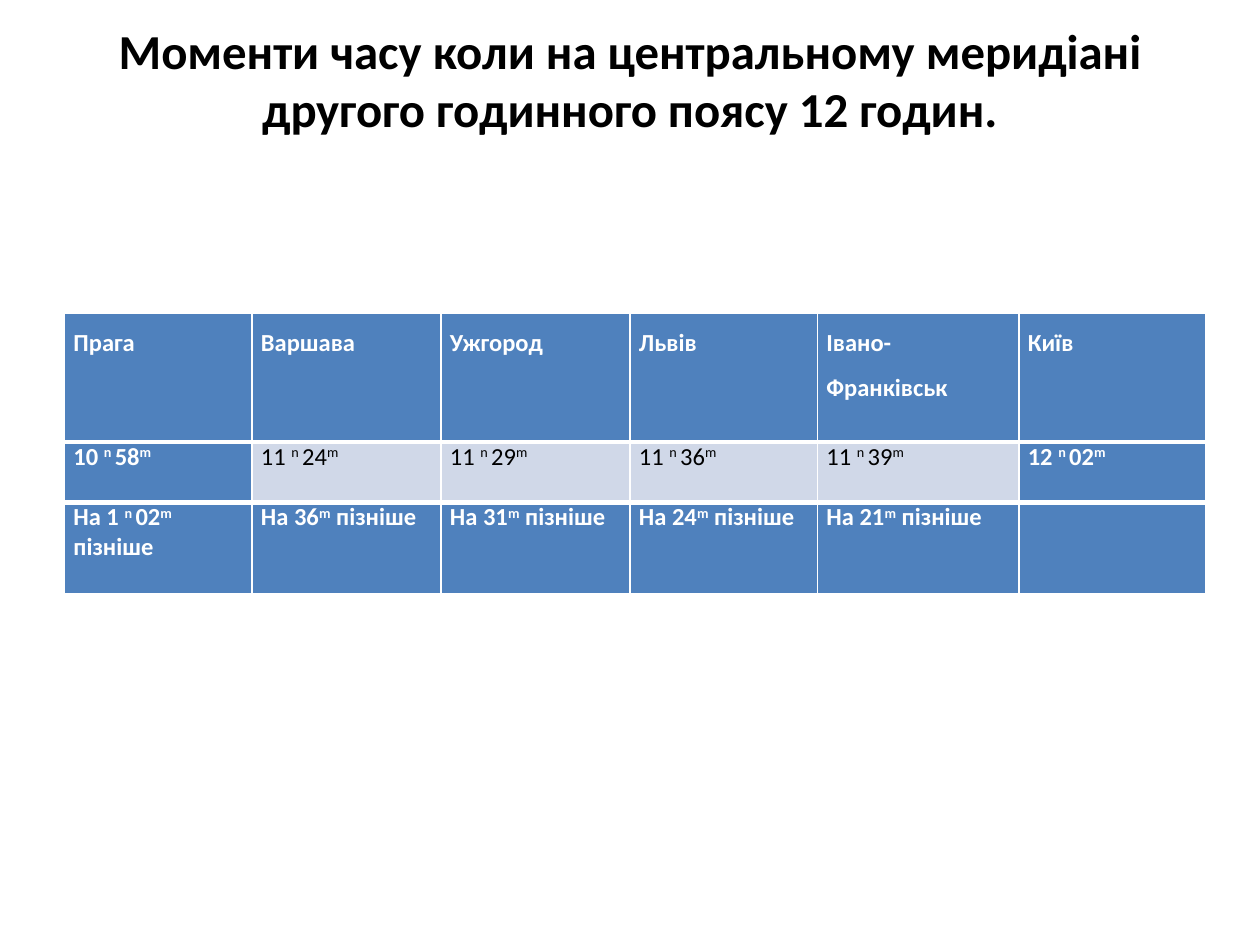
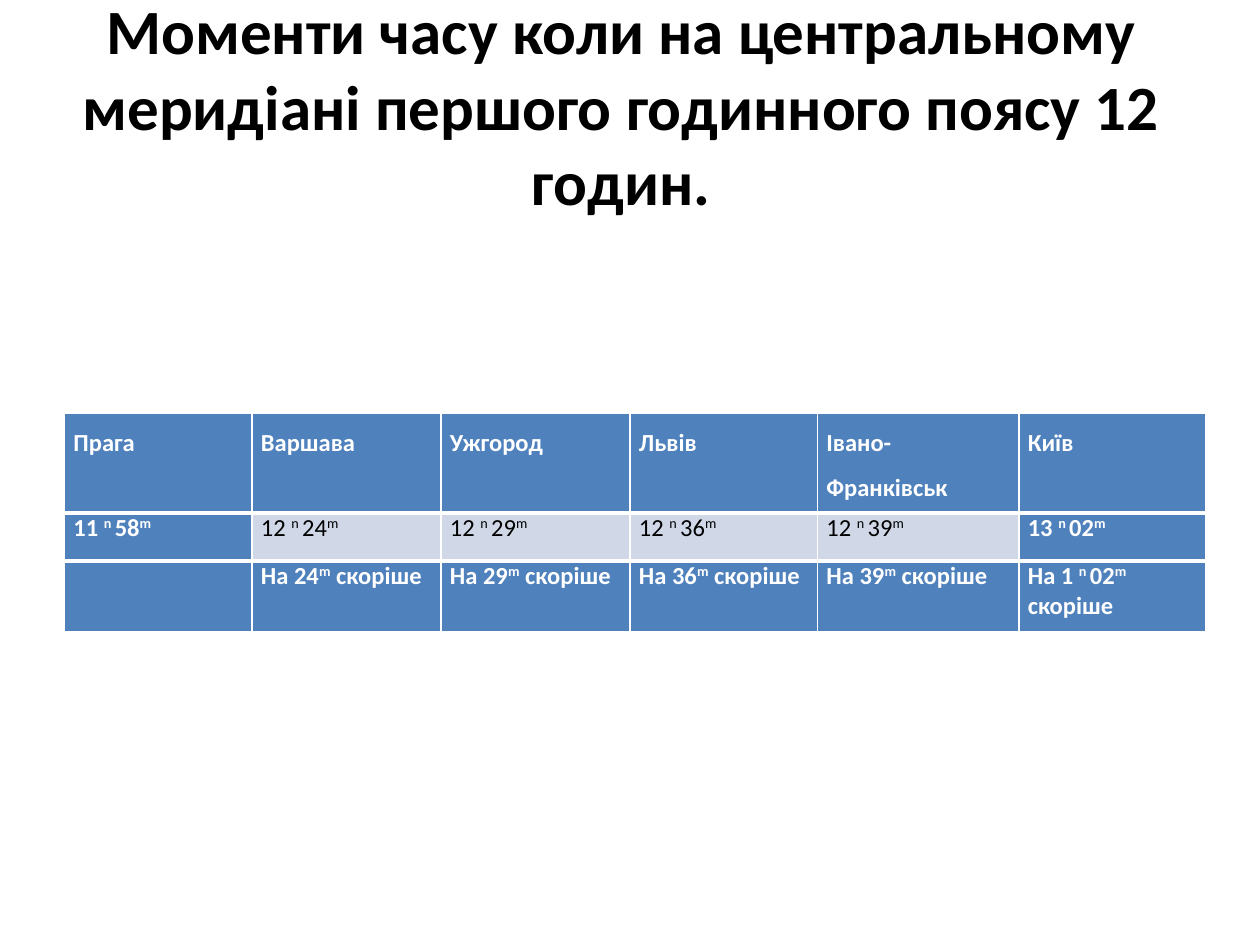
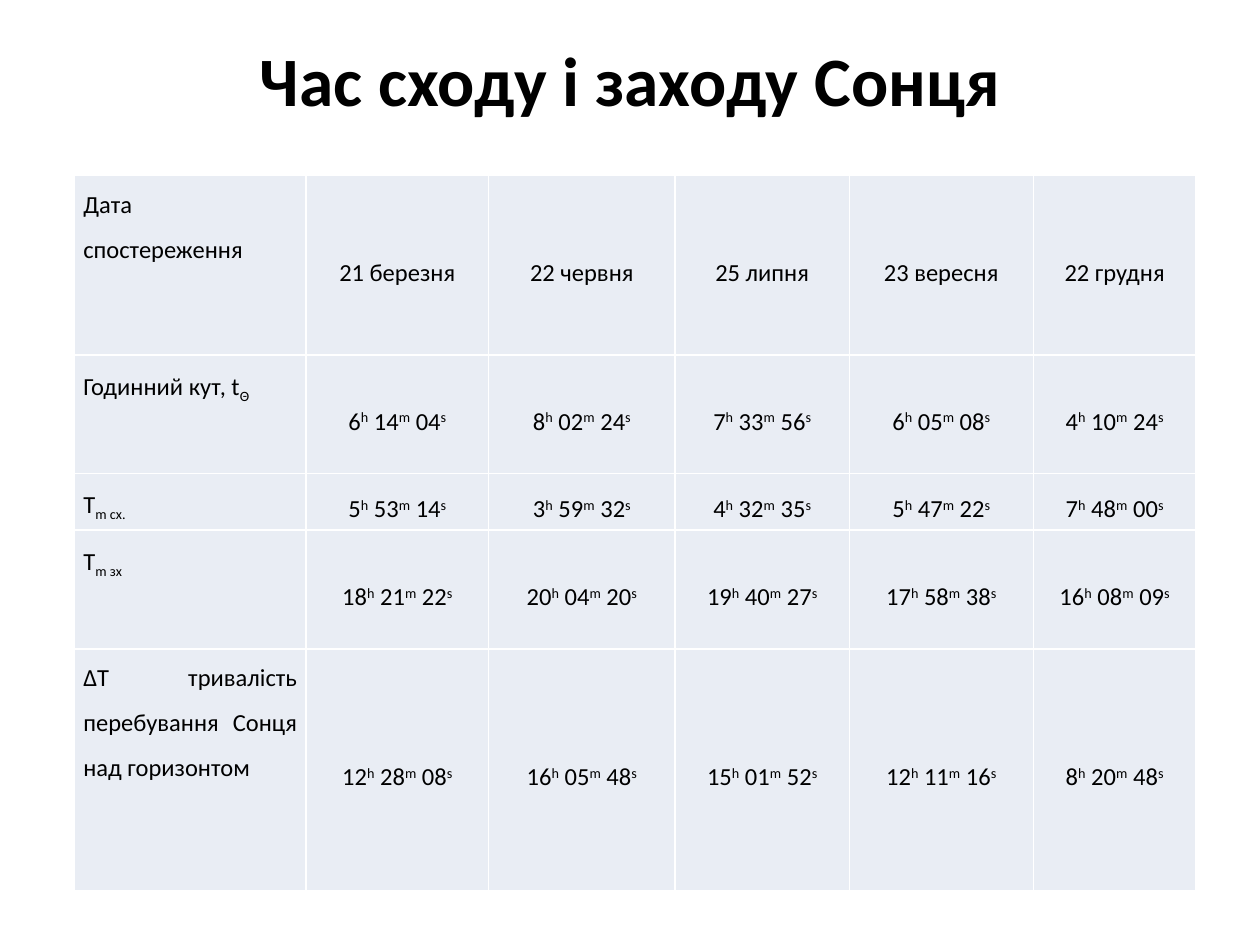
"""Build three slides with tables of local time, sunrise and sunset."""
from lxml.etree import SubElement
from pptx import Presentation
from pptx.dml.color import RGBColor
from pptx.enum.text import MSO_ANCHOR as Anchor, MSO_AUTO_SIZE as AutoSize, PP_ALIGN as Align
from pptx.oxml.ns import qn
from pptx.util import Cm, Pt

BLACK = RGBColor(0x00, 0x00, 0x00)
WHITE = RGBColor(0xFF, 0xFF, 0xFF)
BLUE = RGBColor(0x4F, 0x81, 0xBD)
PALE_BLUE = RGBColor(0xD0, 0xD8, 0xE8)
MIST = RGBColor(0xE9, 0xED, 0xF4)

CITIES = ["Прага", "Варшава", "Ужгород", "Львів", "Івано-Франківськ", "Київ"]
CITY_WIDTHS = [3.78, 3.81, 3.81, 3.78, 4.06, 3.76]
SUN_WIDTHS = [4.67, 3.68, 3.76, 3.51, 3.71, 3.28]
SUN_HEIGHTS = [3.63, 2.39, 1.14, 2.39, 4.88]
DATES = ["21 березня", "22 червня", "25 липня", "23 вересня", "22 грудня"]
SUN_TIMES = [
    ("Годинний кут, t_Θ_", ["6 14 04", "8 02 24", "7 33 56", "6 05 08", "4 10 24"]),
    ("Т_m сх._", ["5 53 14", "3 59 32", "4 32 35", "5 47 22", "7 48 00"]),
    ("Т_m зх_", ["18 21 22", "20 04 20", "19 40 27", "17 58 38", "16 08 09"]),
    ("ΔТ тривалість перебування Сонця над горизонтом",
     ["12 28 08", "16 05 48", "15 01 52", "12 11 16", "8 20 48"]),
]


def city_time(clock):
    hours, minutes = clock.split()
    return f"{hours} ^n ^{minutes}^m^"


def difference(clock, word):
    if not clock:
        return ""
    span = city_time(clock) if " " in clock else f"{clock}^m^"
    return f"На {span} {word}"


def sun_time(clock):
    hours, minutes, seconds = clock.split()
    return f"{hours}^h^ {minutes}^m^ {seconds}^s^"


class Deck:
    """Holds the shared style and the current slide."""

    font = "Calibri"
    cell_size = 14

    def __init__(self):
        self.prs = Presentation()
        self.prs.slide_width, self.prs.slide_height = Cm(25.4), Cm(19.05)
        self.slide = None

    def add_run(self, paragraph, text, size, color, bold, baseline=0):
        run = paragraph.add_run()
        run.text = text
        font = run.font
        font.name, font.size, font.bold = self.font, Pt(size), bold
        font.color.rgb = color
        if baseline:
            run._r.get_or_add_rPr().set("baseline", str(baseline))

    def add_slide(self, heading, size, left=1.27, top=0.76, bottom_inset=1.65):
        self.slide = self.prs.slides.add_slide(self.prs.slide_layouts[5])
        title = self.slide.shapes.title
        title.left, title.top, title.width, title.height = Cm(left), Cm(top), Cm(22.86), Cm(3.18)
        frame = title.text_frame
        frame.word_wrap, frame.auto_size = True, AutoSize.NONE
        frame.vertical_anchor = Anchor.MIDDLE
        frame.margin_bottom = Cm(bottom_inset)
        paragraph = frame.paragraphs[0]
        paragraph.alignment = Align.CENTER
        self.add_run(paragraph, heading, size, BLACK, True)

    def add_table(self, left, top, widths, heights):
        table = self.slide.shapes.add_table(
            len(heights), len(widths), Cm(left), Cm(top), Cm(sum(widths)), Cm(sum(heights))).table
        table.first_row = table.horz_banding = False
        for column, width in zip(table.columns, widths):
            column.width = Cm(width)
        for row, height in zip(table.rows, heights):
            row.height = Cm(height)
        return table

    def add_borders(self, cell, top, bottom):
        properties = cell._tc.get_or_add_tcPr()
        for side, width in zip("LRTB", (1, 1, top, bottom)):
            line = SubElement(properties, qn(f"a:ln{side}"), w=str(Pt(width)))
            SubElement(SubElement(line, qn("a:solidFill")), qn("a:srgbClr"), val=str(WHITE))

    def fill_cell(self, cell, text, fill, color=BLACK, bold=False, spacing=None,
                  align=Align.LEFT, anchor=Anchor.TOP, top=1, bottom=1):
        self.add_borders(cell, top, bottom)
        cell.fill.solid()
        cell.fill.fore_color.rgb = fill
        cell.margin_left = cell.margin_right = Cm(0.18)
        cell.margin_top = cell.margin_bottom = 0
        cell.vertical_anchor = anchor
        paragraph = cell.text_frame.paragraphs[0]
        paragraph.alignment = align
        if spacing:
            paragraph.line_spacing = spacing
        mark, shift = ("_", -25000) if "_" in text else ("^", 30000)
        for index, part in enumerate(text.split(mark)):
            if part:
                self.add_run(paragraph, part, self.cell_size, color, bold, shift * (index % 2))

    def add_city_table(self, top, heights, clocks, shifts, word):
        rows = [CITIES, [city_time(clock) for clock in clocks],
                [difference(shift, word) for shift in shifts]]
        table = self.add_table(1.3, top, CITY_WIDTHS, heights)
        for r, row in enumerate(rows):
            for c, text in enumerate(row):
                inner = r == 1 and 0 < c < len(CITIES) - 1
                self.fill_cell(table.cell(r, c), text,
                               fill=PALE_BLUE if inner else BLUE,
                               color=BLACK if inner else WHITE, bold=not inner,
                               spacing=None if r else 1.5,
                               top=3 if r else 1, bottom=3 if r < 2 else 1)

    def add_sun_table(self):
        rows = [["Дата спостереження", *DATES]]
        rows += [[label, *map(sun_time, clocks)] for label, clocks in SUN_TIMES]
        table = self.add_table(1.5, 3.53, SUN_WIDTHS, SUN_HEIGHTS)
        for r, row in enumerate(rows):
            for c, text in enumerate(row):
                self.fill_cell(table.cell(r, c), text, MIST, spacing=1.5,
                               align=Align.CENTER if c else Align.JUSTIFY,
                               anchor=Anchor.MIDDLE if c else Anchor.TOP)


def main():
    deck = Deck()
    deck.add_slide("Моменти часу коли на центральному меридіані другого годинного поясу 12 годин.", 27.9)
    deck.add_city_table(6.32, [2.59, 1.22, 1.83],
                        ["10 58", "11 24", "11 29", "11 36", "11 39", "12 02"],
                        ["1 02", "36", "31", "24", "21", ""], "пізніше")
    deck.add_slide("Моменти часу коли на центральному меридіані першого годинного поясу 12 годин.", 36,
                   left=1.09, top=0.53, bottom_inset=0.13)
    deck.add_city_table(8.33, [2.01, 0.97, 1.42],
                        ["11 58", "12 24", "12 29", "12 36", "12 39", "13 02"],
                        ["", "24", "29", "36", "39", "1 02"], "скоріше")
    deck.add_slide("Час сходу і заходу Сонця", 39.6)
    deck.add_sun_table()
    deck.prs.save("out.pptx")


if __name__ == "__main__":
    main()
